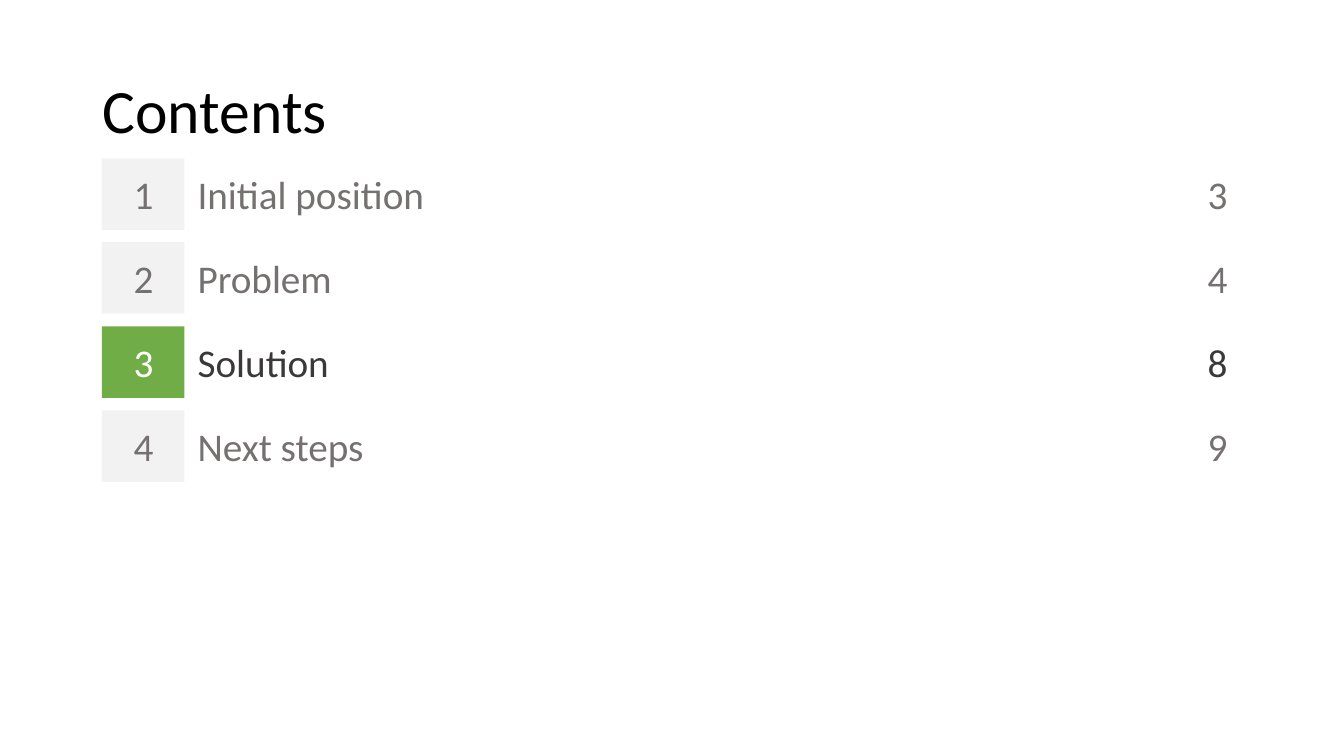
"""Build a contents slide with numbered sections and the current one highlighted."""
from dataclasses import dataclass

from pptx import Presentation
from pptx.dml.color import RGBColor
from pptx.enum.shapes import MSO_SHAPE
from pptx.enum.text import MSO_ANCHOR, PP_ALIGN
from pptx.util import Inches, Pt


@dataclass(frozen=True)
class Theme:
    font: str = "Calibri"
    title_size: int = 44
    entry_size: int = 28
    title: str = "000000"
    muted: str = "767171"
    active: str = "3B3838"
    muted_tile: str = "F2F2F2"
    active_tile: str = "70AD47"
    active_number: str = "FFFFFF"


def write(shape, text, size, color, align, left=0.1, right=0.1):
    frame = shape.text_frame
    frame.text = text
    frame.word_wrap = True
    frame.vertical_anchor = MSO_ANCHOR.MIDDLE
    frame.margin_left, frame.margin_right = Inches(left), Inches(right)
    frame.margin_top = frame.margin_bottom = Inches(0.05)
    paragraph = frame.paragraphs[0]
    paragraph.alignment = align
    font = paragraph.runs[0].font
    font.name = theme.font
    font.size = Pt(size)
    font.color.rgb = RGBColor.from_string(color)


theme = Theme()
sections = [("Initial position", 3), ("Problem", 4), ("Solution", 8), ("Next steps", 9)]
current = 3
first_top = 1.57
row_pitch = 2.5 / 3
row_height = Inches(0.71)

deck = Presentation()
deck.slide_width, deck.slide_height = Inches(13.33), Inches(7.5)
slide = deck.slides.add_slide(deck.slide_layouts[6])

heading = slide.shapes.add_textbox(Inches(0.92), Inches(0.4), Inches(11.5), Inches(1.45))
write(heading, "Contents", theme.title_size, theme.title, PP_ALIGN.LEFT)
heading.text_frame.paragraphs[0].line_spacing = 0.9

for number, (section, page) in enumerate(sections, start=1):
    top = Inches(first_top + (number - 1) * row_pitch)
    is_current = number == current
    entry_color = theme.active if is_current else theme.muted
    tile_color = theme.active_tile if is_current else theme.muted_tile
    number_color = theme.active_number if is_current else theme.muted

    page_label = slide.shapes.add_textbox(Inches(11.73), top, Inches(0.69), row_height)
    write(page_label, str(page), theme.entry_size, entry_color, PP_ALIGN.CENTER)

    tile = slide.shapes.add_shape(
        MSO_SHAPE.RECTANGLE, Inches(1.01), top, Inches(0.82), row_height)
    tile.shadow.inherit = False
    tile.fill.solid()
    tile.fill.fore_color.rgb = RGBColor.from_string(tile_color)
    tile.line.fill.background()
    write(tile, str(number), theme.entry_size, number_color, PP_ALIGN.CENTER, 0.05, 0.04)

    section_label = slide.shapes.add_textbox(Inches(1.91), top, Inches(9.68), row_height)
    write(section_label, section, theme.entry_size, entry_color, PP_ALIGN.LEFT, 0.05)

deck.save("out.pptx")
